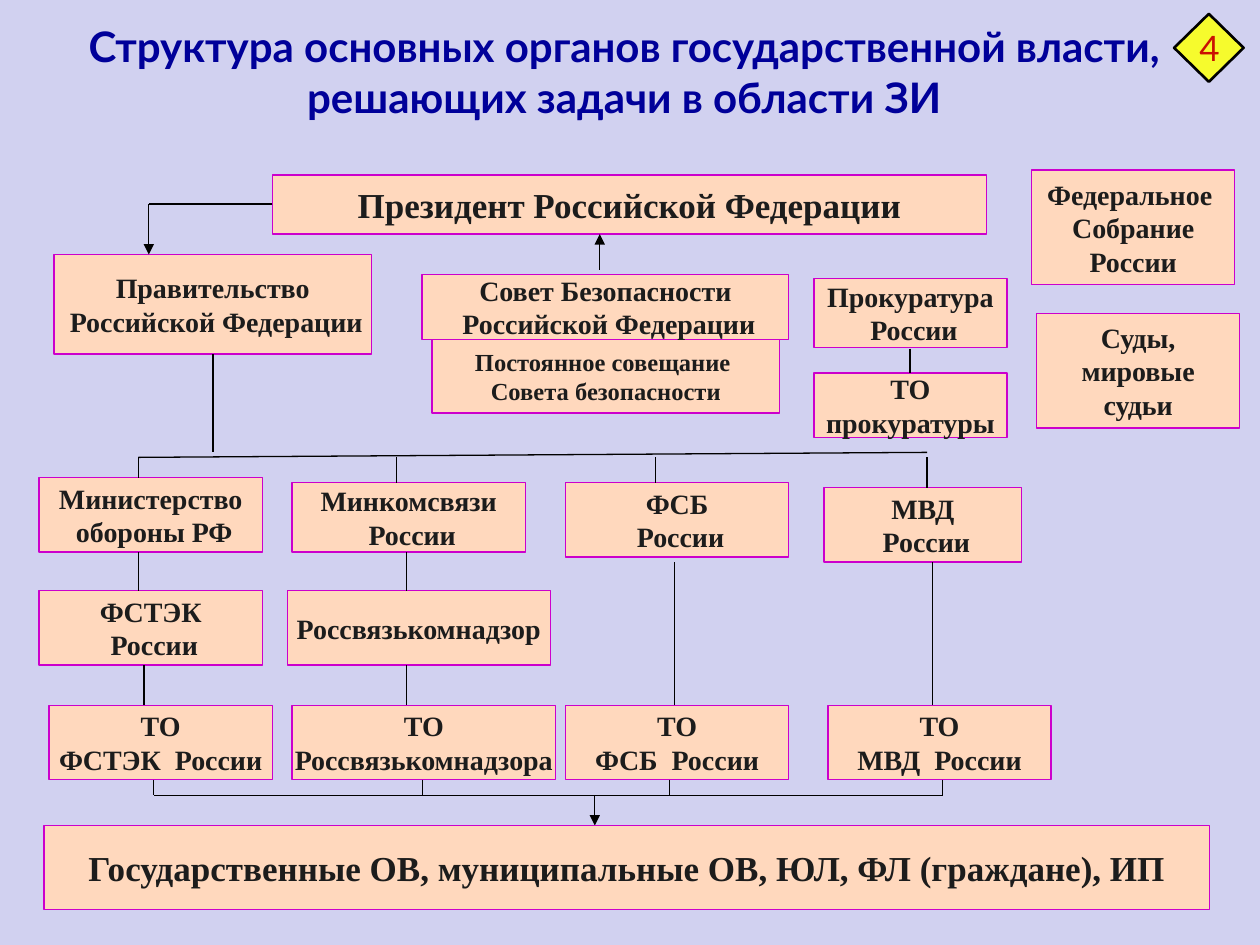
from dataclasses import dataclass

from lxml.etree import SubElement
from pptx import Presentation
from pptx.dml.color import RGBColor
from pptx.enum.shapes import MSO_CONNECTOR, MSO_SHAPE
from pptx.enum.text import MSO_ANCHOR, MSO_AUTO_SIZE, PP_ALIGN
from pptx.oxml.ns import qn
from pptx.util import Cm, Pt


@dataclass(frozen=True)
class Theme:
    background: str = "D1D1F0"
    box_fill: str = "FFD8BD"
    box_line: str = "CC00CC"
    box_text: str = "1C1C1C"
    title: str = "000099"
    badge_fill: str = "F6FB2D"
    badge_text: str = "CA1002"
    line: str = "000000"
    heading_font: str = "Lato"
    box_font: str = "Times New Roman"
    title_size: int = 24
    large_size: int = 20
    box_size: int = 16
    small_size: int = 14
    thin: float = 0.75
    medium: float = 1
    thick: float = 1.5


class Diagram:
    def __init__(self, page, theme):
        self.page = page
        self.theme = theme
        fill = page.background.fill
        fill.solid()
        fill.fore_color.rgb = RGBColor.from_string(theme.background)

    def set_text(self, frame, lines, font, size, color, bold=True, align=PP_ALIGN.CENTER):
        frame.auto_size = MSO_AUTO_SIZE.NONE
        frame.vertical_anchor = MSO_ANCHOR.MIDDLE
        frame.text = "\n".join(lines)
        for para in frame.paragraphs:
            para.alignment = align
            para.font.name = font
            para.font.size = Pt(size)
            para.font.bold = bold
            para.font.color.rgb = RGBColor.from_string(color)

    def title(self, text, left, top, width, height):
        box = self.page.shapes.title
        box.left, box.top, box.width, box.height = map(Cm, (left, top, width, height))
        box.text_frame.word_wrap = True
        theme = self.theme
        self.set_text(box.text_frame, [text], theme.heading_font, theme.title_size, theme.title)

    def shape(self, kind, place, fill, line, weight):
        shape = self.page.shapes.add_shape(kind, *map(Cm, place))
        shape.shadow.inherit = False
        shape.fill.solid()
        shape.fill.fore_color.rgb = RGBColor.from_string(fill)
        shape.line.color.rgb = RGBColor.from_string(line)
        shape.line.width = Pt(weight)
        return shape

    def box(self, lines, left, top, width, height, size=None):
        theme = self.theme
        box = self.shape(MSO_SHAPE.RECTANGLE, (left, top, width, height),
                         theme.box_fill, theme.box_line, theme.thin)
        box.text_frame.word_wrap = False
        self.set_text(box.text_frame, lines, theme.box_font, size or theme.box_size,
                      theme.box_text)

    def badge(self, text, left, top, width, height):
        theme = self.theme
        self.shape(MSO_SHAPE.DIAMOND, (left, top, width, height),
                   theme.badge_fill, theme.line, theme.thick)
        label = self.page.shapes.add_textbox(Cm(left + 0.26), Cm(top + 0.13), Cm(0.71), Cm(1.09))
        label.text_frame.word_wrap = True
        self.set_text(label.text_frame, [text], theme.heading_font, theme.large_size,
                      theme.badge_text, bold=False, align=PP_ALIGN.LEFT)

    def line(self, x1, y1, x2, y2, arrow=False, weight=None):
        connector = self.page.shapes.add_connector(
            MSO_CONNECTOR.STRAIGHT, *map(Cm, (x1, y1, x2, y2)))
        connector.line.color.rgb = RGBColor.from_string(self.theme.line)
        connector.line.width = Pt(weight or self.theme.thin)
        properties = connector._element.spPr
        if arrow:
            SubElement(properties.find(qn("a:ln")), qn("a:tailEnd"), type="triangle")
        SubElement(properties, qn("a:effectLst"))

    def drop(self, x, top, bottom, arrow=False, weight=None):
        self.line(x, top, x, bottom, arrow, weight)


def draw_top(diagram, theme):
    diagram.box(["Президент Российской Федерации"], 5.49, 3.53, 14.4, 1.19, theme.large_size)
    diagram.box(["Постоянное совещание ", "Совета безопасности"],
                8.71, 6.83, 7.01, 1.5, theme.small_size)
    diagram.box(["Правительство", " Российской Федерации"], 1.09, 5.13, 6.4, 2.01)
    diagram.box(["Совет Безопасности", " Российской Федерации"], 8.51, 5.54, 7.39, 1.3)
    diagram.box(["Прокуратура", " России"], 16.41, 5.61, 3.89, 1.4)
    diagram.box(["ТО", "прокуратуры"], 16.41, 7.52, 3.89, 1.3)
    diagram.box(["Федеральное ", "Собрание", "России"], 20.8, 3.43, 4.09, 2.31)
    diagram.box(["Суды,", "мировые", "судьи"], 20.9, 6.32, 4.09, 2.31)
    diagram.drop(12.09, 5.44, 4.72, arrow=True)
    diagram.line(5.49, 4.11, 3, 4.11)
    diagram.drop(3, 4.11, 5.13, arrow=True)
    diagram.drop(4.29, 7.14, 9.12, weight=theme.medium)
    diagram.drop(18.34, 7.03, 7.52, weight=theme.medium)


def draw_ministries(diagram):
    ministries = [
        ("Министерство", " обороны РФ", 0.79, 9.63, 4.5, 1.5, 2.79),
        ("Минкомсвязи", " России", 5.89, 9.73, 4.7, 1.4, 8),
        ("ФСБ", " России", 11.4, 9.73, 4.5, 1.5, 13.21),
        ("МВД", " России", 16.61, 9.83, 3.99, 1.5, 18.69),
    ]
    bus = 9.22
    diagram.line(2.79, bus, 18.69, 9.12)
    for first, second, left, top, width, height, x in ministries:
        diagram.box([first, second], left, top, width, height)
        diagram.drop(x, bus, top)


def draw_services(diagram):
    service_top, office_top, height = 11.91, 14.22, 1.5
    diagram.box(["ФСТЭК", " России"], 0.79, service_top, 4.5, height)
    diagram.box(["Россвязькомнадзор"], 5.79, service_top, 5.31, height)
    for x in (2.79, 8.2):
        diagram.drop(x, 11.13, service_top)
    for x in (2.9, 8.2):
        diagram.drop(x, service_top + height, office_top)
    for x in (13.59, 18.8):
        diagram.drop(x, 11.33, office_top)

    offices = [
        ("ФСТЭК  России", 0.99, 4.5, 3.1),
        ("Россвязькомнадзора", 5.89, 5.31, 8.51),
        ("ФСБ  России", 11.4, 4.5, 13.49),
        ("МВД  России", 16.69, 4.5, 19),
    ]
    bus = 16.03
    for name, left, width, x in offices:
        diagram.box(["ТО", name], left, office_top, width, height)
        diagram.drop(x, office_top + height, bus)
    diagram.line(3.1, bus, 19, bus)
    diagram.drop(11.99, bus, 16.64, arrow=True)


def main():
    deck = Presentation()
    deck.slide_width, deck.slide_height = Cm(25.4), Cm(19.05)
    theme = Theme()
    diagram = Diagram(deck.slides.add_slide(deck.slide_layouts[5]), theme)
    diagram.title("Структура основных органов государственной власти, "
                  "решающих задачи в области ЗИ", 0.89, 0.43, 23.39, 2.01)
    diagram.badge("4", 23.67, 0.28, 1.4, 1.37)
    draw_top(diagram, theme)
    draw_ministries(diagram)
    draw_services(diagram)
    diagram.box(["Государственные ОВ, муниципальные ОВ, ЮЛ, ФЛ (граждане), ИП"],
                0.89, 16.64, 23.5, 1.7, theme.large_size)
    deck.save("out.pptx")


if __name__ == "__main__":
    main()
